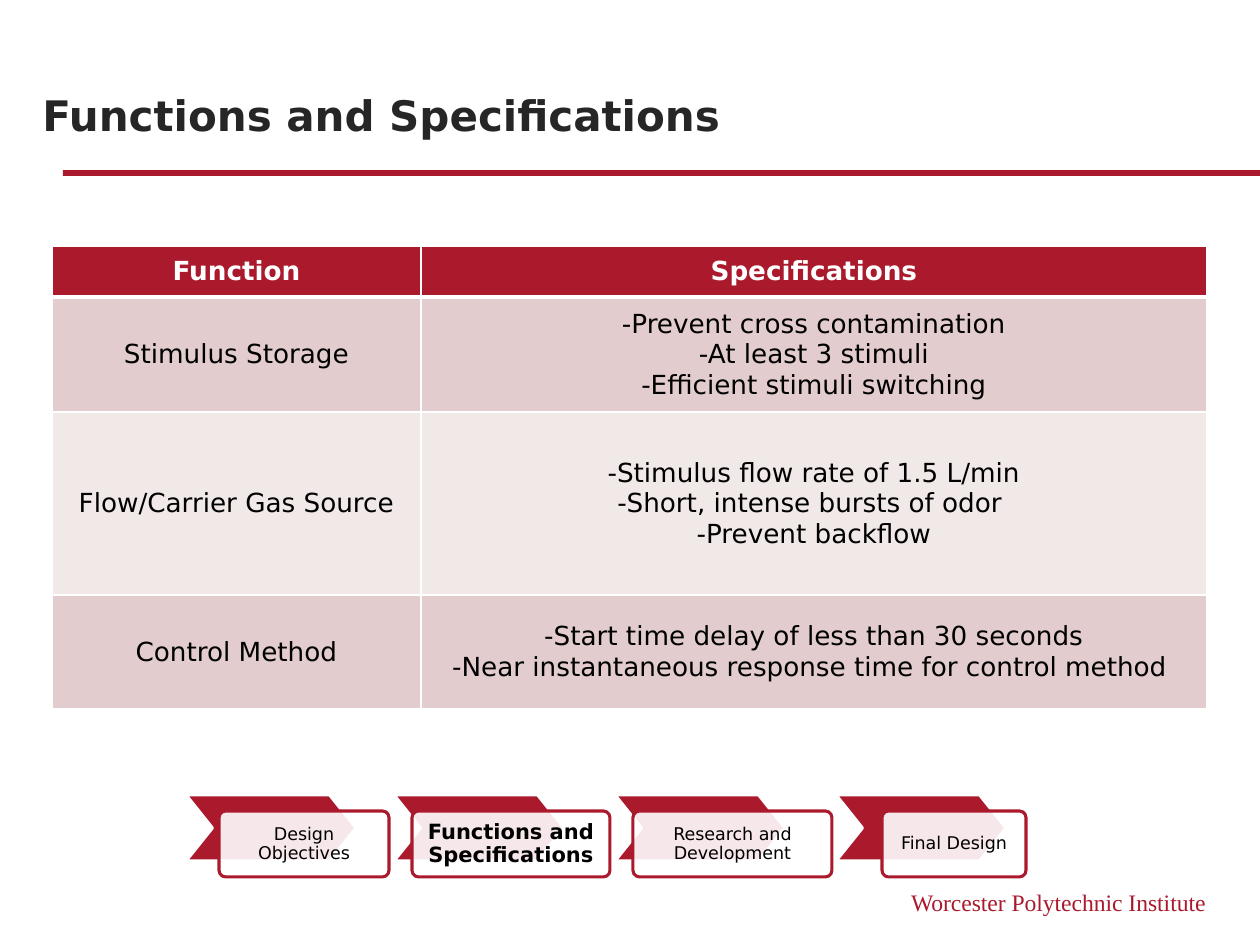
from lxml import etree
from pptx import Presentation
from pptx.dml.color import RGBColor
from pptx.enum.shapes import MSO_SHAPE
from pptx.enum.text import MSO_ANCHOR, PP_ALIGN
from pptx.oxml.ns import qn
from pptx.util import Emu, Pt

RECT, ROUND, CHEVRON = MSO_SHAPE.RECTANGLE, MSO_SHAPE.ROUNDED_RECTANGLE, MSO_SHAPE.CHEVRON
LEFT, CENTER, RIGHT = PP_ALIGN.LEFT, PP_ALIGN.CENTER, PP_ALIGN.RIGHT
TOP, MIDDLE, BOTTOM = MSO_ANCHOR.TOP, MSO_ANCHOR.MIDDLE, MSO_ANCHOR.BOTTOM

RED = RGBColor(0xAB, 0x19, 0x2D)
WHITE = RGBColor(0xFF, 0xFF, 0xFF)
BLACK = RGBColor(0, 0, 0)
DARK = RGBColor(0x26, 0x26, 0x26)
ROSE = RGBColor(0xE2, 0xCC, 0xCD)
PALE = RGBColor(0xF1, 0xE8, 0xE8)
SANS, SERIF = "DejaVu Sans", "Times New Roman"

ROWS = [
    (["Function"], ["Specifications"]),
    (["Stimulus Storage"],
     ["-Prevent cross contamination", "-At least 3 stimuli", "-Efficient stimuli switching"]),
    (["Flow/Carrier Gas Source"],
     ["-Stimulus flow rate of 1.5 L/min", "-Short, intense bursts of odor ", "-Prevent backflow"]),
    (["Control Method"],
     ["-Start time delay of less than 30 seconds",
      "-Near instantaneous response time for control method "]),
]
# Chevron left, label left, label width, text, current step
STEPS = [
    (0, 33, 170, "Design Objectives", False),
    (208, 226, 198, "Functions and Specifications", True),
    (429, 447, 199, "Research and Development", False),
    (650, 696, 144, "Final Design", False),
]


def px(n):
    return Emu(round(n * 914400 / 126))


def write(frame, lines, size, color, bold=False, font=SANS, align=CENTER):
    for i, line in enumerate(lines):
        para = frame.paragraphs[0] if i == 0 else frame.add_paragraph()
        para.alignment = align
        run = para.add_run()
        run.text = line
        run.font.name, run.font.size, run.font.bold = font, Pt(size), bold
        run.font.color.rgb = color


def add_text(slide, box, line, size, color, anchor=TOP, **style):
    frame = slide.shapes.add_textbox(*map(px, box)).text_frame
    frame.word_wrap = True
    frame.vertical_anchor = anchor
    write(frame, [line], size, color, **style)


def add_form(slide, kind, box, fill, line=None):
    form = slide.shapes.add_shape(kind, *map(px, box))
    form.shadow.inherit = False
    form.fill.solid()
    form.fill.fore_color.rgb = fill
    if line is None:
        form.line.fill.background()
    else:
        form.line.color.rgb = line
        form.line.width = Pt(1.75)
    return form


def add_edges(cell, base):
    props = cell._tc.get_or_add_tcPr()
    for side in "LRTB":
        width = base if side == "B" else 1
        edge = etree.SubElement(props, qn(f"a:ln{side}"), w=str(Pt(width)))
        fill = etree.SubElement(edge, qn("a:solidFill"))
        etree.SubElement(fill, qn("a:srgbClr"), val=str(WHITE))


def add_header(slide, x, y):
    add_text(slide, (x, y, 1023, 89), "Functions and Specifications", 24, DARK,
             BOTTOM, bold=True, align=LEFT)
    add_form(slide, RECT, (x + 33, y + 113, 1197, 6), RED)


def add_specs(slide, x, y):
    widths, heights = (369, 786), (51, 115, 183, 114)
    table = slide.shapes.add_table(len(heights), len(widths), px(x), px(y),
                                   px(sum(widths)), px(sum(heights))).table
    table.horz_banding = False
    for col, width in zip(table.columns, widths):
        col.width = px(width)
    for i, (row, height) in enumerate(zip(table.rows, heights)):
        row.height = px(height)
        head = i == 0
        for cell, lines in zip(row.cells, ROWS[i]):
            cell.margin_left = cell.margin_right = px(6)
            cell.margin_top = cell.margin_bottom = px(6)
            cell.vertical_anchor = MIDDLE
            add_edges(cell, 3 if head else 1)
            cell.fill.solid()
            cell.fill.fore_color.rgb = RED if head else ROSE if i % 2 else PALE
            write(cell.text_frame, lines, 15, WHITE if head else BLACK, head)
            for para in cell.text_frame.paragraphs:
                props = para._p.get_or_add_pPr()
                for side in ("marL", "marR"):
                    props.set(side, str(px(13)))


def add_steps(slide, x, y):
    for left, start, width, text, now in STEPS:
        arrow = add_form(slide, CHEVRON, (x + left, y, 170, 66), RED, WHITE)
        arrow.adjustments[0] = 0.4
        label = add_form(slide, ROUND, (x + start, y + 16, width, 66), WHITE, RED)
        label.adjustments[0] = 0.1
        # Let the chevron show through the label
        tint = label.fill._xPr.find(qn("a:solidFill"))[0]
        etree.SubElement(tint, qn("a:alpha"), val="90000")
        frame = label.text_frame
        frame.word_wrap = True
        frame.vertical_anchor = MIDDLE
        frame.margin_left = frame.margin_right = px(12)
        frame.margin_top = frame.margin_bottom = px(12)
        write(frame, [text], 12 if now else 10, BLACK, now)
        frame.paragraphs[0].line_spacing = 0.9


def add_footer(slide, x, y):
    add_text(slide, (x, y, 462, 42), "Worcester Polytechnic Institute", 13.5, RED,
             font=SERIF, align=RIGHT)


def main():
    deck = Presentation()
    deck.slide_width, deck.slide_height = px(1260), px(945)
    slide = deck.slides.add_slide(deck.slide_layouts[6])
    add_header(slide, 30, 57)
    add_specs(slide, 52, 246)
    add_steps(slide, 186, 795)
    add_footer(slide, 756, 882)
    deck.save("out.pptx")


if __name__ == "__main__":
    main()
